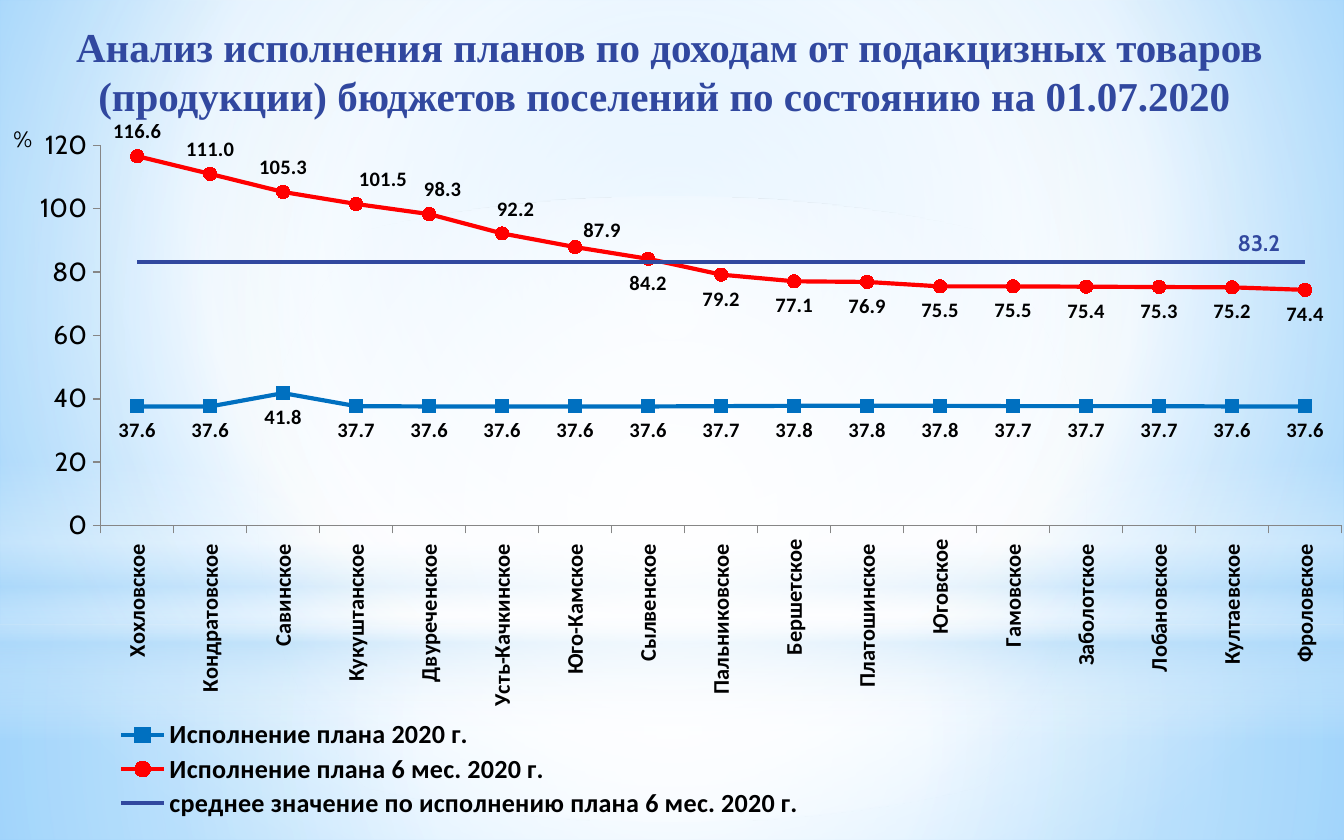
from lxml import etree
from pptx import Presentation
from pptx.chart.data import CategoryChartData
from pptx.dml.color import RGBColor
from pptx.enum.chart import (XL_CHART_TYPE, XL_LABEL_POSITION, XL_LEGEND_POSITION,
                             XL_MARKER_STYLE, XL_TICK_MARK)
from pptx.enum.shapes import MSO_SHAPE
from pptx.enum.text import MSO_ANCHOR, MSO_AUTO_SIZE, PP_ALIGN
from pptx.oxml import parse_xml
from pptx.oxml.ns import nsdecls, qn
from pptx.util import Cm, Pt

RECTANGLE, OVAL = MSO_SHAPE.RECTANGLE, MSO_SHAPE.OVAL
ABOVE, BELOW = XL_LABEL_POSITION.ABOVE, XL_LABEL_POSITION.BELOW
SQUARE, CIRCLE, NO_MARKER = XL_MARKER_STYLE.SQUARE, XL_MARKER_STYLE.CIRCLE, XL_MARKER_STYLE.NONE

COLORS = {"text": "000000", "title": "31489F", "plan": "0070C0", "half_year": "FF0000",
          "average": "31489F", "axis": "868686", "white": "FFFFFF", "haze": "B4DCFA",
          "sky": "9ED5FF", "deep_sky": "5BB9FF"}


def gradient(stops, focus=None):
    """Gradient of (position, colour, opacity); radial around focus, else vertical."""
    stop_xml = "".join(
        f'<a:gs pos="{position * 1000}"><a:srgbClr val="{COLORS[color]}">'
        f'<a:alpha val="{opacity * 1000}"/></a:srgbClr></a:gs>'
        for position, color, opacity in stops)
    if focus:
        sides = " ".join(f'{side}="{value * 1000}"' for side, value in zip("ltrb", focus))
        direction = f'<a:path path="circle"><a:fillToRect {sides}/></a:path>'
    else:
        direction = '<a:lin ang="5400000" scaled="0"/>'
    return parse_xml(f'<a:gradFill {nsdecls("a")} rotWithShape="1"><a:gsLst>{stop_xml}</a:gsLst>'
                     f'{direction}</a:gradFill>')


def manual_layout(x, y, width=None, height=None, edge=True, inner=False):
    """Chart layout in fractions of the chart; without edge, x and y are offsets."""
    items = [("layoutTarget", "inner")] if inner else []
    if edge:
        items += [("xMode", "edge"), ("yMode", "edge")]
    items += [("x", x), ("y", y)]
    if width:
        items += [("w", width), ("h", height)]
    content = "".join(f'<c:{tag} val="{value}"/>' for tag, value in items)
    return parse_xml(f'<c:layout {nsdecls("c")}><c:manualLayout>{content}'
                     '</c:manualLayout></c:layout>')


presentation = Presentation()
presentation.slide_width, presentation.slide_height = Cm(25.4), Cm(15.88)
slide = presentation.slides.add_slide(presentation.slide_layouts[5])
title = slide.shapes.title

# Background
slide.background.fill.solid()
background_fill = slide.background._cSld.find(".//" + qn("a:solidFill"))
background_fill.getparent().replace(background_fill, gradient(
    [(0, "sky", 100), (60, "white", 100), (100, "deep_sky", 100)], (20, 10, 20, 60)))

# Soft light layers behind the title: shape, top, height, stops, focus
CENTER = (50, 50, 50, 50)
layers = [
    (RECTANGLE, 11.81, 4.07, [(0, "white", 91), (37, "white", 76), (100, "haze", 79)], CENTER),
    (RECTANGLE, 0, 11.81, [(0, "white", 89), (48, "white", 62), (100, "haze", 79)], CENTER),
    (RECTANGLE, 8.71, 5.28, [(0, "white", 0), (29, "white", 30), (45, "haze", 40),
                             (55, "white", 26), (65, "haze", 60), (100, "white", 0)], None),
    (OVAL, 3.71, 11.81, [(0, "white", 100), (56, "white", 0)], CENTER),
]
for kind, top, height, stops, focus in layers:
    shape = slide.shapes.add_shape(kind, 0, Cm(top), Cm(25.4), Cm(height))
    shape.shadow.inherit = False
    shape.line.fill.background()
    shape.fill.solid()
    solid_fill = shape._element.spPr.find(qn("a:solidFill"))
    solid_fill.getparent().replace(solid_fill, gradient(stops, focus))
    title._element.addprevious(shape._element)

# Title
title.left, title.top, title.width, title.height = 0, Cm(0.28), Cm(25.3), Cm(1.32)
frame = title.text_frame
frame.text = ("Анализ исполнения планов по доходам от подакцизных товаров (продукции) "
              "бюджетов поселений по состоянию на 01.07.2020 ")
frame.word_wrap, frame.auto_size = True, MSO_AUTO_SIZE.NONE
frame.vertical_anchor = MSO_ANCHOR.TOP
paragraph = frame.paragraphs[0]
paragraph.alignment = PP_ALIGN.CENTER
paragraph.font.name, paragraph.font.size, paragraph.font.bold = "Times New Roman", Pt(22), True
paragraph.font.color.rgb = RGBColor.from_string(COLORS["title"])

# Chart data
chart_data = CategoryChartData(number_format="#,##0.0")
chart_data.categories = [
    "Хохловское ", "Кондратовское ", "Савинское ", "Кукуштанское ", "Двуреченское ",
    "Усть-Качкинское ", "Юго-Камское ", "Сылвенское ", "Пальниковское ", "Бершетское",
    "Платошинское ", "Юговское", "Гамовское ", "Заболотское ", "Лобановское ",
    "Култаевское ", "Фроловское "]
chart_data.add_series("Исполнение плана 2020 г.", [
    37.6, 37.6, 41.8, 37.7, 37.6, 37.6, 37.6, 37.6, 37.7, 37.8, 37.8, 37.8, 37.7, 37.7,
    37.7, 37.6, 37.6])
chart_data.add_series("Исполнение плана 6 мес. 2020 г.", [
    116.6, 111, 105.3, 101.5, 98.3, 92.2, 87.9, 84.2, 79.2, 77.1, 76.9, 75.5, 75.5, 75.4,
    75.3, 75.2, 74.4])
chart_data.add_series("среднее значение по исполнению плана 6 мес. 2020 г.", [83.2] * 17)
chart = slide.shapes.add_chart(XL_CHART_TYPE.LINE_MARKERS, Cm(-0.08), Cm(1.55),
                               Cm(25.45), Cm(14.12), chart_data).chart
chart.has_title = False
chart.font.name, chart.font.size = "Cabin", Pt(18)
chart.font.color.rgb = RGBColor.from_string(COLORS["text"])
plot_area = chart._chartSpace.chart.plotArea
for old_layout in plot_area.findall(qn("c:layout")):
    plot_area.remove(old_layout)
plot_area.insert(0, manual_layout(0.078, 0.085, 0.922, 0.509, inner=True))

# Axes
category_axis, value_axis = chart.category_axis, chart.value_axis
for axis in (category_axis, value_axis):
    axis.has_major_gridlines = False
    axis.major_tick_mark = XL_TICK_MARK.OUTSIDE
    axis.format.line.color.rgb = RGBColor.from_string(COLORS["axis"])
    axis.format.line.width = Pt(0.75)
category_font = category_axis.tick_labels.font
category_font.name, category_font.size, category_font.bold = "Calibri", Pt(12), True
category_axis._element.find(".//" + qn("a:bodyPr")).set("rot", "-5400000")
value_axis.minimum_scale, value_axis.maximum_scale, value_axis.major_unit = 0, 120, 20
value_axis.tick_labels.font.size = Pt(14)
value_axis.tick_labels.number_format = "#,##0"
value_axis.tick_labels.number_format_is_linked = False
axis_title = value_axis.axis_title
axis_title.text_frame.text = "%"
axis_title.text_frame.paragraphs[0].font.size = Pt(12)
axis_title.text_frame.paragraphs[0].font.bold = False
title_element = axis_title._element
title_element.find(".//" + qn("a:bodyPr")).set("rot", "0")
for old_layout in title_element.findall(qn("c:layout")):
    title_element.remove(old_layout)
title_element.find(qn("c:tx")).addnext(manual_layout(0.01, 0.05))

# Series; moved labels sit above their point, shifted by (x, y)
series_styles = [
    ("plan", SQUARE, {}),
    ("half_year", CIRCLE, {0: (0, 0), 1: (0, 0), 2: (0, 0), 3: (0.02, 0), 4: (0.01, 0),
                           5: (0.01, 0), 6: (0.02, 0.01)}),
    ("average", NO_MARKER, {15: (0.02, 0)}),
]
for series, (color_name, marker, moved_labels) in zip(chart.plots[0].series, series_styles):
    color = RGBColor.from_string(COLORS[color_name])
    is_average = color_name == "average"
    series.smooth = False
    series.format.line.color.rgb = color
    series.format.line.width = Pt(2.25)
    series.marker.style = marker
    if not is_average:
        series.marker.size = 7
        series.marker.format.fill.solid()
        series.marker.format.fill.fore_color.rgb = color
        series.marker.format.line.color.rgb = color
    labels = series.data_labels
    labels.show_value = not is_average
    labels.number_format, labels.number_format_is_linked = "#,##0.0", False
    labels.position = BELOW
    labels.font.name, labels.font.size, labels.font.bold = "Calibri", Pt(11), True
    for index, (shift_x, shift_y) in moved_labels.items():
        label = series.points[index].data_label
        label.font.name = "Cabin" if is_average else "Calibri"
        label.font.size, label.font.bold = Pt(12 if is_average else 11), True
        label.font.color.rgb = RGBColor.from_string(COLORS["average" if is_average else "text"])
        label.position = ABOVE
        index_element = series._element.xpath(f'.//c:dLbl/c:idx[@val="{index}"]')[0]
        number_format = etree.Element(qn("c:numFmt"), formatCode="#,##0.0", sourceLinked="0")
        index_element.addnext(number_format)
        if shift_x:
            index_element.addnext(manual_layout(shift_x, shift_y, edge=False))

# Legend
chart.has_legend = True
legend = chart.legend
legend.position, legend.include_in_layout = XL_LEGEND_POSITION.BOTTOM, False
legend.font.name, legend.font.size, legend.font.bold = "Calibri", Pt(14), True
for old_layout in legend._element.findall(qn("c:layout")):
    legend._element.remove(old_layout)
legend._element.find(qn("c:legendPos")).addnext(manual_layout(0.07, 0.85, 0.55, 0.14))

presentation.save("out.pptx")
